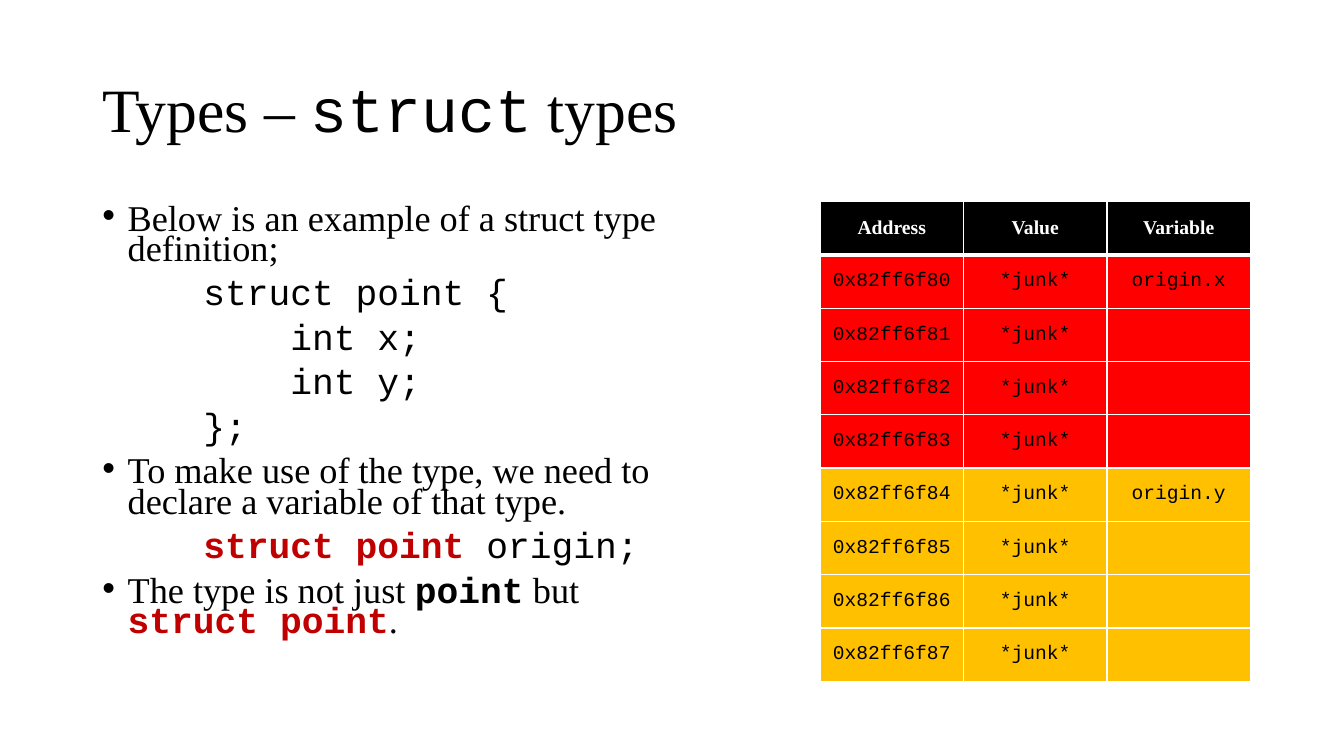
from pptx import Presentation
from pptx.dml.color import RGBColor
from pptx.enum import text as t
from pptx.oxml import parse_xml
from pptx.oxml.ns import nsdecls
from pptx.util import Pt

PX = 9525
SERIF, MONO = "Times New Roman", "Courier New"
BLACK, WHITE, CRIMSON = "000000", "FFFFFF", "C00000"
RED, AMBER = "FF0000", "FFC000"

# Each line: kind, runs; each run: text, font, bold, colour
LINES = [
    ("bullet", [("Below is an example of a struct type definition;", SERIF)]),
    ("code", [("struct point {", MONO)]),
    ("inner", [("int x;", MONO)]),
    ("inner", [("int y;", MONO)]),
    ("code", [("};", MONO)]),
    ("bullet", [("To make use of the type, we need to declare a variable of that type.", SERIF)]),
    ("code", [("struct point", MONO, True, CRIMSON), (" origin;", MONO)]),
    ("bullet", [("The type is not just ", SERIF), ("point", MONO, True),
                (" but ", SERIF), ("struct point", MONO, True, CRIMSON), (".", SERIF)]),
]
INDENT = {"bullet": (24, -24), "code": (96, 0), "inner": (179, 0)}


def paint(hue):
    return RGBColor.from_string(hue)


def style(font, name, size, bold=False, hue=BLACK):
    font.name, font.size, font.bold = name, Pt(size), bold
    font.color.rgb = paint(hue)


def place(shape, box):
    shape.left, shape.top, shape.width, shape.height = (n * PX for n in box)


def write(para, runs, size):
    if len(runs) == 1:
        para.text = runs[0][0]
        style(para.font, runs[0][1], size, *runs[0][2:])
        return
    for words, *look in runs:
        run = para.add_run()
        run.text = words
        style(run.font, look[0], size, *look[1:])


def add_title(shape, box):
    place(shape, box)
    frame = shape.text_frame
    frame.auto_size = t.MSO_AUTO_SIZE.NONE
    frame.vertical_anchor = t.MSO_ANCHOR.MIDDLE
    para = frame.paragraphs[0]
    para.alignment = t.PP_ALIGN.LEFT
    para.line_spacing = 0.9
    write(para, [("Types – ", SERIF), ("struct", MONO), (" types", SERIF)], 44)


def add_body(shape, box):
    place(shape, box)
    frame = shape.text_frame
    frame.auto_size = t.MSO_AUTO_SIZE.NONE
    for i, (kind, runs) in enumerate(LINES):
        para = frame.add_paragraph() if i else frame.paragraphs[0]
        para.line_spacing = 0.7
        para.space_before = Pt(10)
        props = para._p.get_or_add_pPr()
        left, first = INDENT[kind]
        props.set("marL", str(left * PX))
        props.set("indent", str(first * PX))
        mark = 'buChar %s char="•"' if kind == "bullet" else "buNone %s"
        props.append(parse_xml(f"<a:{mark % nsdecls('a')}/>"))
        write(para, runs, 25.9)


def edge(cell, head):
    """Draw white cell borders, thick below the header row and thin elsewhere."""
    props = cell._tc.get_or_add_tcPr()
    for i, side in enumerate("LRTB"):
        wide = 3 if head and side == "B" else 1
        props.insert(i, parse_xml(
            f'<a:ln{side} {nsdecls("a")} w="{Pt(wide)}"><a:solidFill>'
            f'<a:srgbClr val="{WHITE}"/></a:solidFill></a:ln{side}>'))


def add_memory(slide, box):
    names = {0: "origin.x", 4: "origin.y"}
    rows = [("Address", "Value", "Variable")]
    rows += [(f"0x82ff6f8{i}", "*junk*", names.get(i, "")) for i in range(8)]
    table = slide.shapes.add_table(len(rows), 3, *(n * PX for n in box)).table
    for r, row in enumerate(rows):
        head = r == 0
        fill = BLACK if head else RED if r < 5 else AMBER
        for c, words in enumerate(row):
            cell = table.cell(r, c)
            cell.fill.solid()
            cell.fill.fore_color.rgb = paint(fill)
            cell.vertical_anchor = t.MSO_ANCHOR.MIDDLE
            edge(cell, head)
            para = cell.text_frame.paragraphs[0]
            para.alignment = t.PP_ALIGN.CENTER
            look = (SERIF, True, WHITE) if head else (MONO,)
            write(para, [(words, *look)], 14)


def main():
    deck = Presentation()
    deck.slide_width, deck.slide_height = 1280 * PX, 720 * PX
    slide = deck.slides.add_slide(deck.slide_layouts[1])
    add_title(slide.shapes.title, (88, 38, 1104, 139))
    add_body(slide.placeholders[1], (88, 192, 552, 457))
    add_memory(slide, (781, 192, 410, 457))
    deck.save("out.pptx")


if __name__ == "__main__":
    main()
